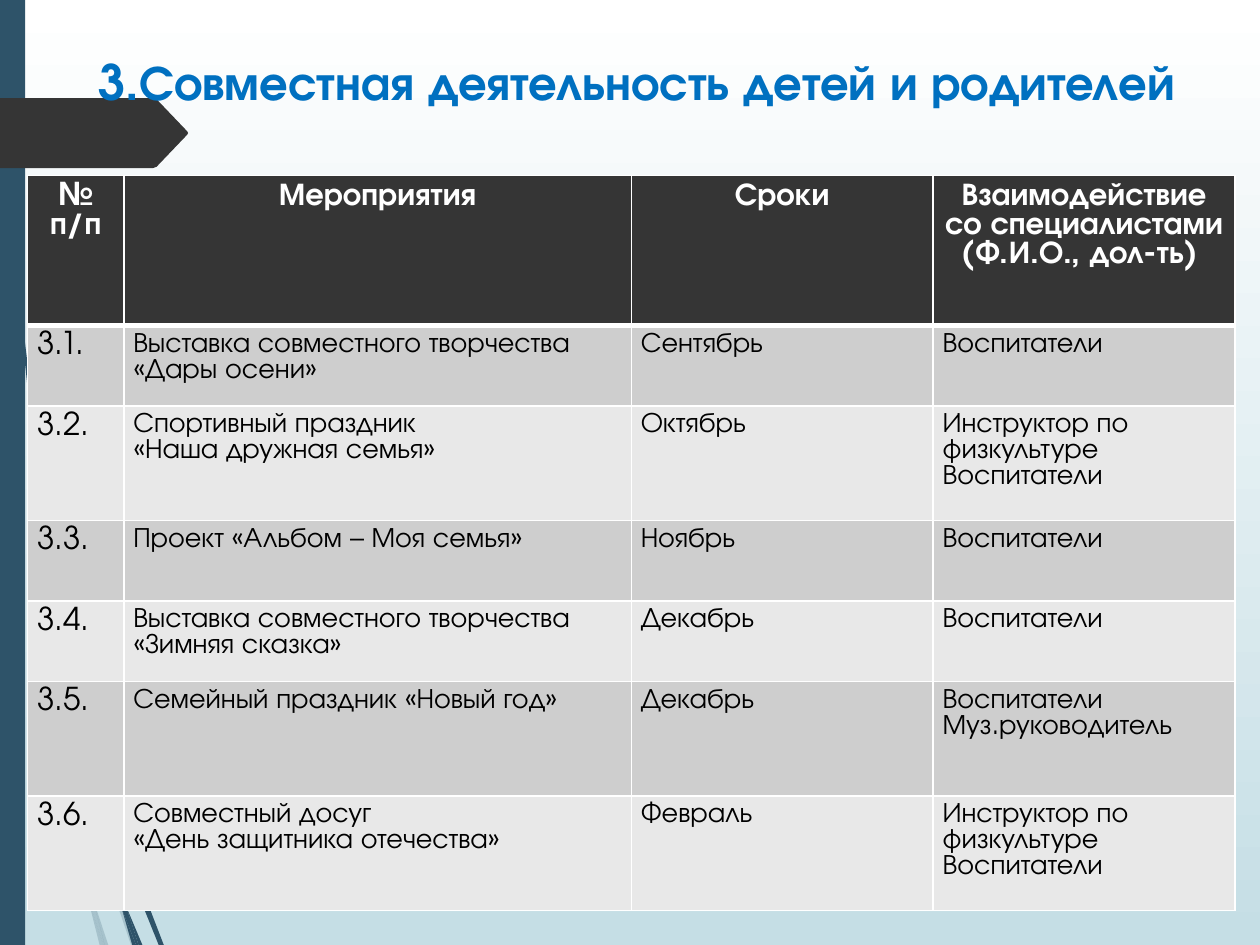
import pptx
import pptx.dml.color
import pptx.enum.shapes
import pptx.enum.text
import pptx.oxml
import pptx.oxml.ns
import pptx.util

Pt = pptx.util.Pt
RGBColor = pptx.dml.color.RGBColor
ALIGN = pptx.enum.text.PP_ALIGN

FONT = "TeX Gyre Adventor"
WHITE = RGBColor(0xFF, 0xFF, 0xFF)
BLACK = RGBColor(0, 0, 0)
SKY = RGBColor(0xC5, 0xDE, 0xE5)
NAVY = RGBColor(0x2E, 0x53, 0x69)
CHARCOAL = RGBColor(0x35, 0x35, 0x35)
BLUE = RGBColor(0, 0x70, 0xC0)
BANDS = (RGBColor(0xCE, 0xCE, 0xCE), RGBColor(0xE8, 0xE8, 0xE8))

# Outlines in points, relative to the slide's top left corner
PALE_STRANDS = [
    [(43.9, 429.1), (43.9, 439.2), (61.2, 499.7), (74.9, 540), (77.8, 540),
     (63.4, 498.2), (46.1, 437)],
    [(59.8, 540), (61.9, 540), (52.6, 511.9)],
    [(50.4, 514.1), (56.9, 540), (59, 540)],
    [(48.2, 498.2), (46.8, 491.8), (49.7, 509), (50.4, 514.1), (59, 540),
     (59.8, 540), (52.6, 511.9)],
]
DARK_STRANDS = [
    [(3.6, 79.2), (10.1, 167.8), (19.4, 255.6), (33.1, 343.4), (33.8, 346.3),
     (32.4, 326.2), (21.6, 255.6), (10.8, 167), (4.3, 78.5), (2.2, 0), (1.4, 0)],
    [(65.5, 461.5), (65.5, 472.3), (78.5, 509.8), (90.7, 540), (93.6, 540),
     (81.4, 508.3), (67.7, 467.3)],
    [(79.2, 540), (81.4, 540), (72, 517.7)],
    [(69.8, 519.8), (75.6, 540), (77.8, 540)],
    [(69.1, 508.3), (65.5, 497.5), (69.1, 516.2), (69.8, 519.8), (77.8, 540),
     (79.2, 540), (72, 517.7)],
]

COLUMN_WIDTHS = (55, 290, 172.5, 172.5)
ROW_HEIGHTS = (85.5, 46, 65.5, 46, 46, 65.5, 65.5)
HEADINGS = ("№ п/п", "Мероприятия", "Сроки",
            "Взаимодействие со специалистами (Ф.И.О., дол-ть) ")
EVENTS = [
    ("3.1.", "Выставка совместного творчества «Дары осени»", "Сентябрь", "Воспитатели"),
    ("3.2.", "Спортивный праздник\n«Наша дружная семья»", "Октябрь",
     "Инструктор по физкультуре\nВоспитатели"),
    ("3.3.", "Проект «Альбом – Моя семья»", "Ноябрь", "Воспитатели"),
    ("3.4.", "Выставка совместного творчества «Зимняя сказка»", "Декабрь", "Воспитатели"),
    ("3.5.", "Семейный праздник «Новый год»", "Декабрь", "Воспитатели\nМуз.руководитель"),
    ("3.6.", "Совместный досуг\n«День защитника отечества»", "Февраль",
     "Инструктор по физкультуре\nВоспитатели"),
]


def write(frame, text, size=16, color=BLACK, bold=False, align=ALIGN.LEFT):
    """Fill a text frame, one paragraph for each line of text."""
    frame.word_wrap = True
    for index, line in enumerate(text.split("\n")):
        paragraph = frame.paragraphs[0] if index == 0 else frame.add_paragraph()
        paragraph.alignment = align
        run = paragraph.add_run()
        run.text = line
        run.font.name = FONT
        run.font.size = Pt(size)
        run.font.bold = bold
        run.font.color.rgb = color


def paint(shape, color, alpha=None):
    shape.shadow.inherit = False
    shape.line.fill.background()
    shape.fill.solid()
    shape.fill.fore_color.rgb = color
    if alpha is not None:
        tint = shape.fill._xPr.find(".//" + pptx.oxml.ns.qn("a:srgbClr"))
        tint.append(pptx.oxml.parse_xml(
            f'<a:alpha {pptx.oxml.ns.nsdecls("a")} val="{alpha * 1000}"/>'))


def add_outline(slide, points, left, top, color, alpha=None):
    corners = [(Pt(left + x), Pt(top + y)) for x, y in points]
    builder = slide.shapes.build_freeform(*corners[0], scale=1.0)
    builder.add_line_segments(corners[1:], close=True)
    paint(builder.convert_to_shape(), color, alpha)


def set_border(cell, side, width):
    cell._tc.get_or_add_tcPr().append(pptx.oxml.parse_xml(
        f'<a:{side} {pptx.oxml.ns.nsdecls("a")} w="{Pt(width)}">'
        f'<a:solidFill><a:srgbClr val="{WHITE}"/></a:solidFill></a:{side}>'))


def add_backdrop(slide, left, top, width, height):
    # Vertical gradient
    fill = slide.background.fill
    fill.gradient()
    fill.gradient_angle = 270
    for stop, color, position in zip(fill.gradient_stops, (WHITE, SKY), (0, 1)):
        stop.color.rgb = color
        stop.position = position
    # Curved strands
    for points in PALE_STRANDS:
        add_outline(slide, points, left, top, NAVY, alpha=20)
    for points in DARK_STRANDS:
        add_outline(slide, points, left, top, NAVY)
    # Side bar
    bar = slide.shapes.add_shape(pptx.enum.shapes.MSO_SHAPE.RECTANGLE,
                                 Pt(left), Pt(top), Pt(width), Pt(height))
    paint(bar, NAVY)


def add_page_tag(slide, left, top, width, height):
    middle, shoulder = height / 2, width - 18
    points = [(0, 0), (shoulder - 2, 0), (shoulder, 0.7), (width - 0.5, middle - 1),
              (width, middle), (width - 0.5, middle + 1), (shoulder, height - 0.7),
              (shoulder - 2, height), (0, height)]
    add_outline(slide, points, left, top, CHARCOAL)


def add_title(slide, left, top, width, height):
    title = slide.shapes.add_textbox(Pt(left), Pt(top), Pt(width), Pt(height))
    write(title.text_frame, "3.Совместная деятельность детей и родителей",
          size=27.9, color=BLUE, bold=True, align=ALIGN.RIGHT)


def add_plan(slide, left, top, width, height):
    rows = [HEADINGS] + EVENTS
    plan = slide.shapes.add_table(len(rows), len(HEADINGS), Pt(left), Pt(top),
                                  Pt(width), Pt(height)).table
    for column, column_width in zip(plan.columns, COLUMN_WIDTHS):
        column.width = Pt(column_width)
    for r, (entries, row_height) in enumerate(zip(rows, ROW_HEIGHTS)):
        plan.rows[r].height = Pt(row_height)
        for c, entry in enumerate(entries):
            cell = plan.cell(r, c)
            cell.margin_left = cell.margin_right = Pt(5.4)
            cell.margin_top = cell.margin_bottom = Pt(3.6)
            for side in ("lnL", "lnR", "lnT", "lnB"):
                heavy = (r, side) in ((0, "lnB"), (1, "lnT"))
                set_border(cell, side, 3 if heavy else 1)
            cell.fill.solid()
            if r == 0:
                cell.fill.fore_color.rgb = CHARCOAL
                write(cell.text_frame, entry, size=18, color=WHITE, bold=True,
                      align=ALIGN.CENTER)
            else:
                cell.fill.fore_color.rgb = BANDS[(r - 1) % 2]
                write(cell.text_frame, entry, size=18 if c == 0 else 16)


def main():
    deck = pptx.Presentation()
    deck.slide_width, deck.slide_height = Pt(720), Pt(540)
    slide = deck.slides.add_slide(deck.slide_layouts[6])
    add_backdrop(slide, 0, 0, 14.4, 540)
    add_page_tag(slide, 0, 56, 107.5, 40)
    add_title(slide, 31, 26, 648, 85)
    add_plan(slide, 15.8, 100.4, sum(COLUMN_WIDTHS), sum(ROW_HEIGHTS))
    deck.save("out.pptx")


if __name__ == "__main__":
    main()
